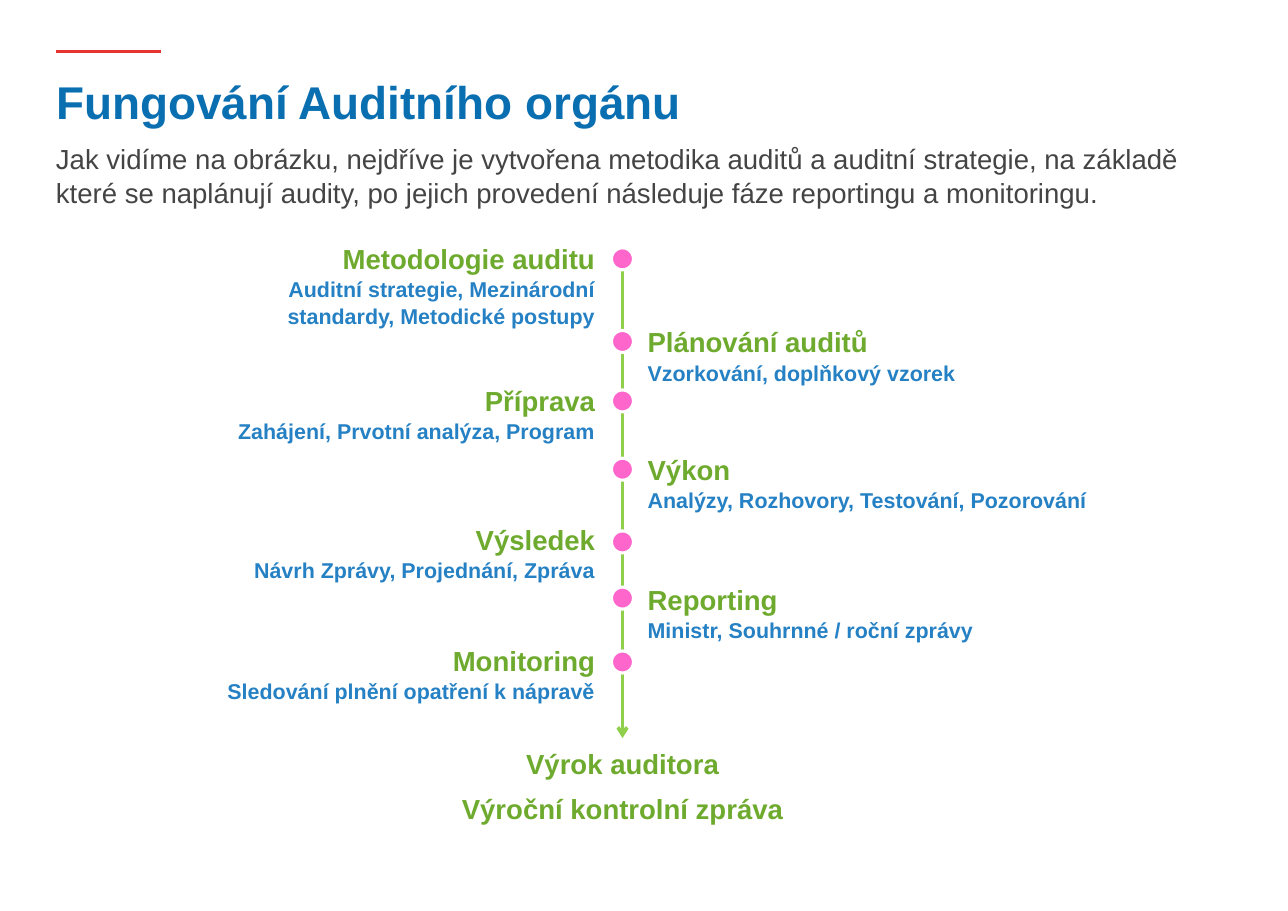
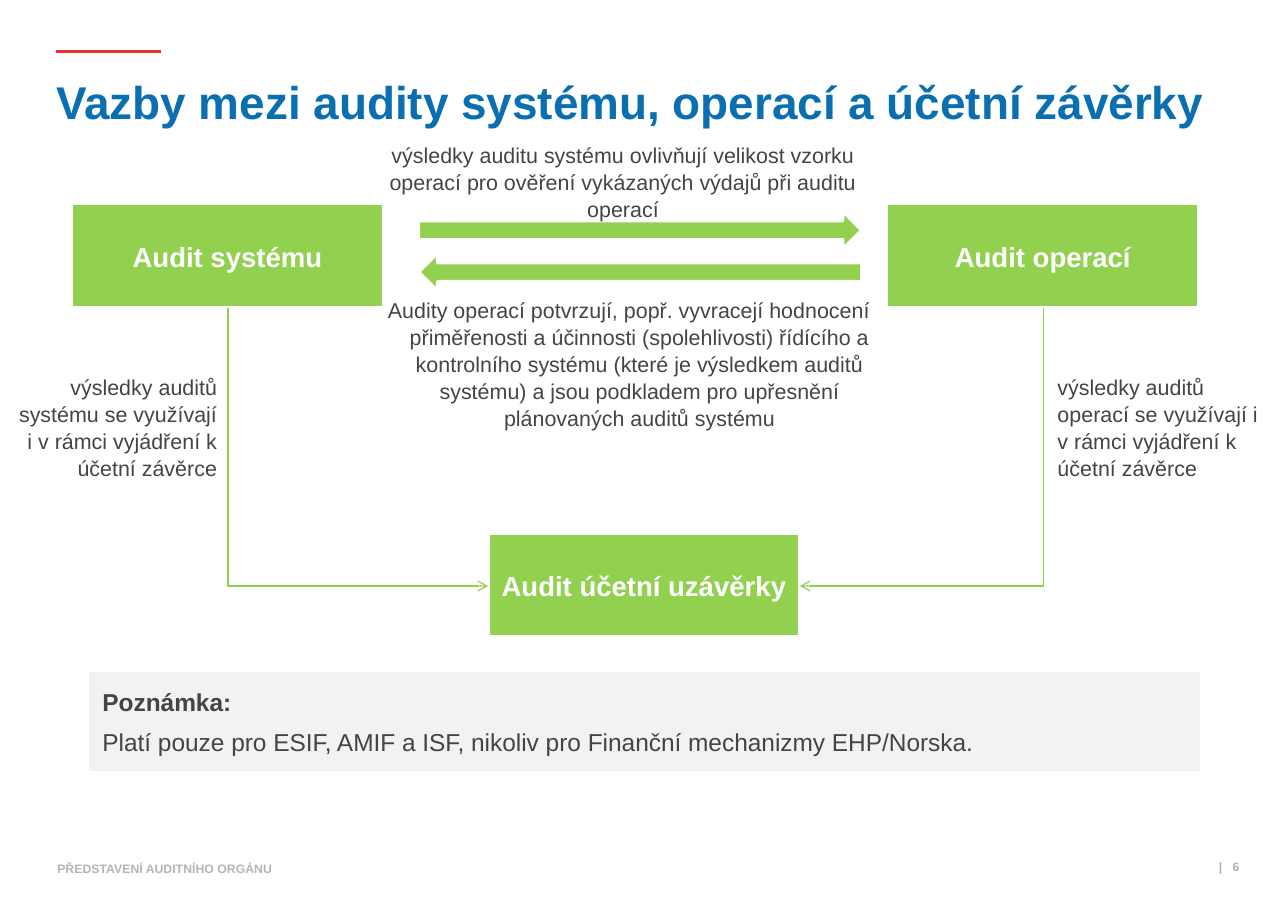
from lxml.etree import SubElement
from pptx import Presentation
from pptx.dml.color import RGBColor
from pptx.enum.shapes import MSO_CONNECTOR as CONN, MSO_SHAPE as SHAPE
from pptx.enum.text import MSO_ANCHOR as ANCHOR, PP_ALIGN as ALIGN
from pptx.oxml.ns import qn
from pptx.util import Inches, Pt

FONT = "Arial"
COLORS = {
    "title": "0A6FB0", "accent": "E73431", "text": "444444", "muted": "B4B4B4",
    "heading": "6EAA2E", "detail": "2581C4", "line": "8FCF4B", "box": "92D050",
    "dot": "FF66CC", "note": "F2F2F2", "white": "FFFFFF",
}
STEPS = [
    (0.00, 0.12, "Metodologie auditu",
     "Auditní strategie, Mezinárodní standardy, Metodické postupy"),
    (0.76, 0.87, "Plánování auditů", "Vzorkování, doplňkový vzorek"),
    (1.29, 1.41, "Příprava", "Zahájení, Prvotní analýza, Program"),
    (1.92, 2.03, "Výkon", "Analýzy, Rozhovory, Testování, Pozorování"),
    (2.55, 2.69, "Výsledek", "Návrh Zprávy, Projednání, Zpráva"),
    (3.10, 3.20, "Reporting", "Ministr, Souhrnné / roční zprávy"),
    (3.65, 3.78, "Monitoring", "Sledování plnění opatření k nápravě"),
]


def rgb(name):
    """Return the named palette colour."""
    return RGBColor.from_string(COLORS[name])


def inches(*values):
    """Convert several lengths to inches."""
    return [Inches(v) for v in values]


def write(tf, lines, align=ALIGN.LEFT, anchor=ANCHOR.TOP, inset=(0.1, 0.05),
          before=0, spacing=1.05):
    """Fill a text frame with lines of (text, size, colour, bold)."""
    tf.word_wrap = True
    tf.vertical_anchor = anchor
    tf.margin_left = tf.margin_right = Inches(inset[0])
    tf.margin_top = tf.margin_bottom = Inches(inset[1])
    for i, (text, size, color, bold) in enumerate(lines):
        p = tf.add_paragraph() if i else tf.paragraphs[0]
        p.text = text
        p.alignment = align
        p.line_spacing = spacing
        p.space_before = Pt(before)
        font = p.runs[0].font
        font.name, font.size, font.bold = FONT, Pt(size), bold
        font.color.rgb = rgb(color)


def add_text(s, box, lines, **style):
    """Add a text box and return it."""
    tb = s.shapes.add_textbox(*inches(*box))
    write(tb.text_frame, lines, **style)
    return tb


def add_shape(s, kind, box, fill, outline=True):
    """Add a flat preset shape, with a white outline if wanted."""
    sp = s.shapes.add_shape(kind, *inches(*box))
    sp.shadow.inherit = False
    sp.fill.solid()
    sp.fill.fore_color.rgb = rgb(fill)
    if outline:
        sp.line.color.rgb = rgb("white")
        sp.line.width = Pt(2)
    else:
        sp.line.fill.background()
    return sp


def add_line(s, ends, color, width, kind=CONN.STRAIGHT, arrow=False):
    """Add a connector without shadow, with an optional arrowhead."""
    c = s.shapes.add_connector(kind, *inches(*ends))
    c.line.color.rgb = rgb(color)
    c.line.width = Pt(width)
    if arrow:
        SubElement(c.line._get_or_add_ln(), qn("a:tailEnd"), type="arrow")
    SubElement(c._element.spPr, qn("a:effectLst"))
    return c


def add_corner(s, x1, y1, x2, y2):
    """Draw an arrow that goes down from the start and then sideways."""
    drop, run = y2 - y1, abs(x2 - x1)
    cx, cy = (x1 + x2) / 2, (y1 + y2) / 2
    rightward = x2 > x1
    half = -drop / 2 if rightward else drop / 2
    ends = (cx - half, cy - run / 2, cx + half, cy + run / 2)
    if not rightward:
        ends = (cx - drop / 2, cy - run / 2, cx + drop / 2, cy + run / 2)
    c = add_line(s, ends, "line", 0.75, CONN.ELBOW, arrow=True)
    sp_pr = c._element.spPr
    sp_pr.find(qn("a:prstGeom")).set("prst", "bentConnector2")
    sp_pr.find(qn("a:xfrm")).set("rot", str((270 if rightward else 90) * 60000))


def add_slide(prs, title):
    """Add a blank slide with the shared red rule and title."""
    s = prs.slides.add_slide(prs.slide_layouts[6])
    add_line(s, (0.51, 0.47, 1.46, 0.47), "accent", 2)
    add_text(s, (0.51, 0.64, 10.77, 0.51), [(title, 30, "title", True)],
             inset=(0, 0))
    return s


def add_footer(s, text, number):
    """Add the footer text and the page number."""
    for box, label, align in [((0.52, 7.82, 4.15, 0.13), text, ALIGN.LEFT),
                              ((9.52, 7.8, 1.73, 0.13), number, ALIGN.RIGHT)]:
        add_text(s, box, [(label, 8, "muted", True)], align=align,
                 anchor=ANCHOR.MIDDLE, inset=(0, 0), spacing=1)


def add_timeline(s, x, y):
    """Place the steps left and right of a vertical axis at x."""
    add_line(s, (x, y + 0.22, x, y + 4.57), "line", 2.25, arrow=True)
    for i, (text_y, dot_y, heading, detail) in enumerate(STEPS):
        lines = [(heading, 18, "heading", True), (detail, 14, "detail", True)]
        if i % 2:
            box, align = (x + 0.13, y + text_y, 4.4, 0.64), ALIGN.LEFT
        else:
            box, align = (x - 4.05, y + text_y, 3.9, 0.64), ALIGN.RIGHT
        add_text(s, box, lines, align=align)
        add_shape(s, SHAPE.OVAL, (x - 0.1, y + dot_y, 0.2, 0.2), "dot")
    for i, text in enumerate(["Výrok auditora", "Výroční kontrolní zpráva"]):
        add_text(s, (x - 1.66, y + 4.59 + 0.41 * i, 3.32, 0.4),
                 [(text, 18, "heading", True)], align=ALIGN.CENTER)


def add_audit_box(s, x, y, text):
    """Add one green audit box."""
    sp = add_shape(s, SHAPE.RECTANGLE, (x, y, 2.83, 0.94), "box")
    write(sp.text_frame, [(text, 18, "white", True)], align=ALIGN.CENTER,
          anchor=ANCHOR.MIDDLE)


def add_exchange(s, x, y):
    """Add the two opposite arrows and their explanations."""
    for i in range(2):
        sp = add_shape(s, SHAPE.RIGHT_ARROW,
                       (x + 0.63, y + 0.69 + 0.38 * i, 4.02, 0.34), "box")
        sp.rotation = 180 * i
    add_text(s, (x + 0.25, y, 4.47, 0.81), [(
        "výsledky auditu systému ovlivňují velikost vzorku operací pro ověření "
        "vykázaných výdajů při auditu operací", 14, "text", False)],
        align=ALIGN.CENTER)
    tb = add_text(s, (x, y + 1.41, 4.88, 1.28), [(
        "Audity operací potvrzují, popř. vyvracejí hodnocení přiměřenosti a "
        "účinnosti (spolehlivosti) řídícího a kontrolního systému (které je "
        "výsledkem auditů systému) a jsou podkladem pro upřesnění plánovaných "
        "auditů systému", 14, "text", False)],
        align=ALIGN.CENTER, inset=(0, 0.05), before=6)
    p_pr = tb.text_frame.paragraphs[0]._p.get_or_add_pPr()
    p_pr.set("marL", str(Inches(0.39)))
    p_pr.set("indent", str(Inches(-0.19)))


def add_audit_links(s, x, y):
    """Place the three audits with the arrows and labels between them."""
    for dx, dy, text in [(0, 0, "Audit systému"), (7.4, 0, "Audit operací"),
                         (3.78, 2.99, "Audit účetní uzávěrky")]:
        add_audit_box(s, x + dx, y + dy, text)
    add_exchange(s, x + 2.52, y - 0.62)
    for start, end, label_x, audit, align in [
            (1.42, 3.78, -0.62, "systému", ALIGN.RIGHT),
            (8.82, 6.61, 8.85, "operací", ALIGN.LEFT)]:
        add_corner(s, x + start, y + 0.95, x + end, y + 3.47)
        text = (f"výsledky auditů {audit} se využívají i v rámci vyjádření "
                "k účetní závěrce")
        add_text(s, (x + label_x, y + 1.49, 2.04, 1.04),
                 [(text, 14, "text", False)], align=align, before=6)


def add_note(s, box):
    """Add the grey note panel."""
    sp = add_shape(s, SHAPE.RECTANGLE, box, "note", outline=False)
    write(sp.text_frame, [
        ("Poznámka:", 16, "text", True),
        ("Platí pouze pro ESIF, AMIF a ISF, nikoliv pro Finanční mechanizmy "
         "EHP/Norska.", 16, "text", False)], inset=(0.12, 0.12), before=6)


def build_process(prs):
    """Build the slide on how the audit body works."""
    s = add_slide(prs, "Fungování Auditního orgánu")
    add_text(s, (0.41, 1.22, 10.95, 0.71), [(
        "Jak vidíme na obrázku, nejdříve je vytvořena metodika auditů a auditní "
        "strategie, na základě které se naplánují audity, po jejich provedení "
        "následuje fáze reportingu a monitoringu.", 18, "text", False)])
    add_timeline(s, 5.65, 2.13)


def build_links(prs):
    """Build the slide on the links between audits."""
    s = add_slide(prs, "Vazby mezi audity systému, operací a účetní závěrky")
    add_audit_links(s, 0.65, 1.85)
    add_note(s, (0.81, 6.1, 10.08, 0.9))
    add_footer(s, "PŘEDSTAVENÍ AUDITNÍHO ORGÁNU", "|   6")


def main():
    """Create and save the presentation."""
    prs = Presentation()
    prs.slide_width, prs.slide_height = inches(11.69, 8.27)
    build_process(prs)
    build_links(prs)
    prs.save("out.pptx")


if __name__ == "__main__":
    main()
